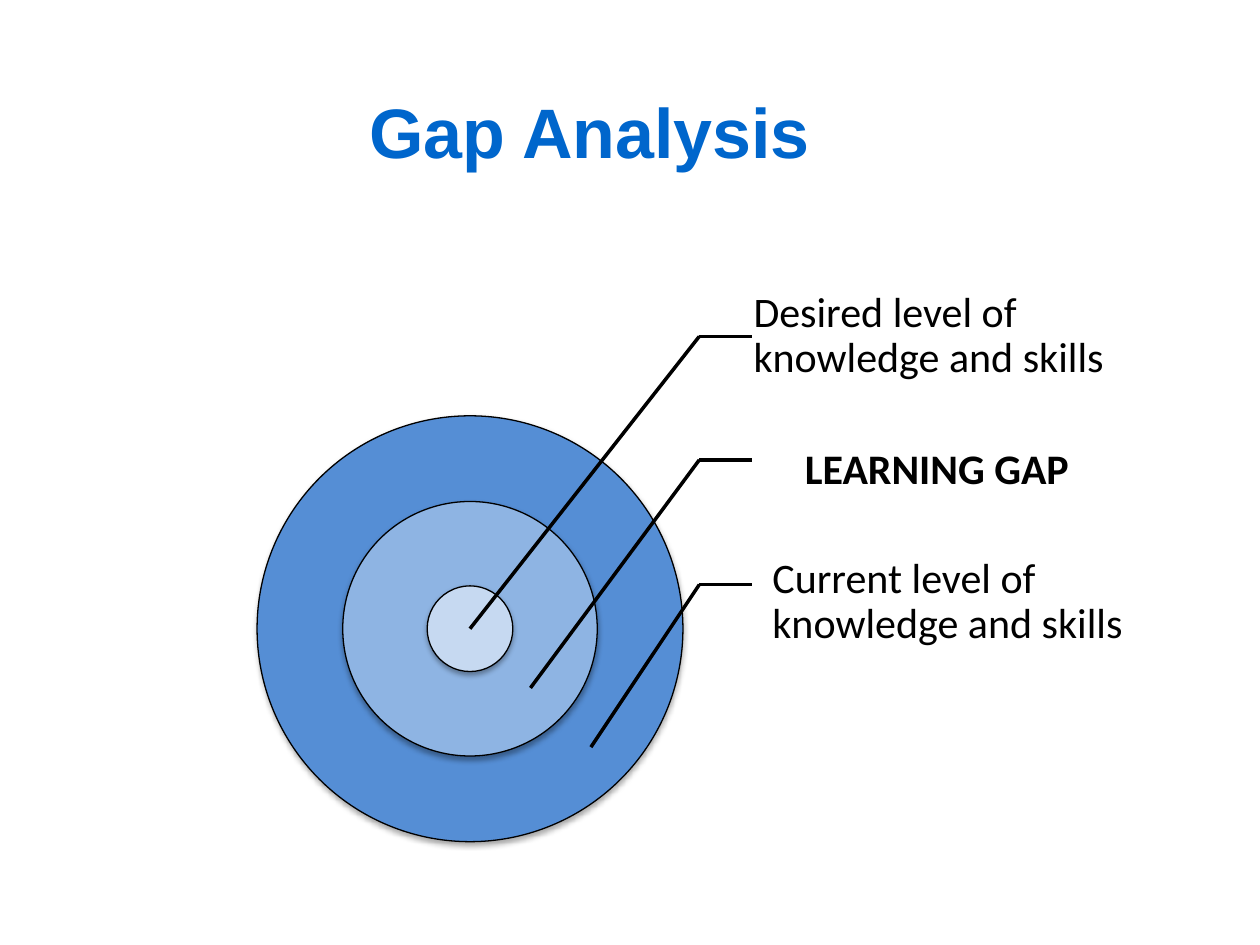
from lxml.etree import SubElement
from pptx import Presentation
from pptx.dml.color import RGBColor
from pptx.enum.shapes import MSO_CONNECTOR, MSO_SHAPE
from pptx.enum.text import MSO_ANCHOR, PP_ALIGN
from pptx.oxml.ns import qn
from pptx.util import Inches, Pt

TITLE_BLUE = RGBColor(0x00, 0x66, 0xCC)
BLACK = RGBColor(0x00, 0x00, 0x00)
OUTER_BLUE = RGBColor(0x55, 0x8E, 0xD5)
MIDDLE_BLUE = RGBColor(0x8E, 0xB4, 0xE3)
INNER_BLUE = RGBColor(0xC6, 0xD9, 0xF1)

CENTER_X, CENTER_Y = 3.73, 4.99
ELBOW_X, LABEL_X = 5.55, 5.97


def set_title(slide, text):
    title = slide.shapes.title
    title.left, title.top = Inches(0.43), Inches(0.6)
    title.width, title.height = Inches(8.5), Inches(1.25)
    frame = title.text_frame
    frame.text = text
    frame.vertical_anchor = MSO_ANCHOR.TOP
    frame.margin_top = Inches(0.1)
    paragraph = frame.paragraphs[0]
    paragraph.alignment = PP_ALIGN.CENTER
    font = paragraph.font
    font.name, font.size, font.bold = "Arial", Pt(40), True
    font.color.rgb = TITLE_BLUE


def add_soft_shadow(shape):
    shape.shadow.inherit = False
    effects = shape._element.spPr.find(qn("a:effectLst"))
    shadow = SubElement(effects, qn("a:outerShdw"), blurRad=str(Pt(3.1)),
                        dist=str(Pt(1.8)), dir="5400000", rotWithShape="0")
    color = SubElement(shadow, qn("a:srgbClr"), val=str(BLACK))
    SubElement(color, qn("a:alpha"), val="35000")


def add_ring(slide, diameter, color):
    ring = slide.shapes.add_shape(
        MSO_SHAPE.OVAL, Inches(CENTER_X - diameter / 2),
        Inches(CENTER_Y - diameter / 2), Inches(diameter), Inches(diameter))
    ring.fill.solid()
    ring.fill.fore_color.rgb = color
    ring.line.color.rgb = BLACK
    ring.line.width = Pt(0.75)
    add_soft_shadow(ring)


def add_line(slide, start, end):
    line = slide.shapes.add_connector(
        MSO_CONNECTOR.STRAIGHT, *map(Inches, start + end))
    line.line.color.rgb = BLACK
    line.line.width = Pt(2)
    SubElement(line._element.spPr, qn("a:effectLst"))


def add_leader(slide, y, target):
    elbow = (ELBOW_X, y)
    add_line(slide, elbow, (LABEL_X, y))
    add_line(slide, elbow, target)


def add_label(slide, text, left, top, width, emphasized):
    box = slide.shapes.add_textbox(
        Inches(left), Inches(top), Inches(width), Inches(0.98))
    frame = box.text_frame
    frame.word_wrap = True
    frame.vertical_anchor = MSO_ANCHOR.MIDDLE
    frame.margin_left, frame.margin_right = Inches(0.19), Inches(0.1)
    frame.margin_top = frame.margin_bottom = Inches(0.03)
    frame.text = text
    paragraph = frame.paragraphs[0]
    paragraph.alignment = PP_ALIGN.CENTER if emphasized else PP_ALIGN.LEFT
    paragraph.line_spacing = 0.9
    font = paragraph.font
    font.name, font.size, font.bold = "Calibri", Pt(24), emphasized
    font.color.rgb = BLACK


def main():
    presentation = Presentation()
    presentation.slide_width, presentation.slide_height = Inches(10), Inches(7.5)
    slide = presentation.slides.add_slide(presentation.slide_layouts[5])
    set_title(slide, "Gap Analysis")

    for diameter, color in ((3.38, OUTER_BLUE), (2.02, MIDDLE_BLUE), (0.68, INNER_BLUE)):
        add_ring(slide, diameter, color)

    levels = (
        ("Desired level of knowledge and skills", 5.79, 2.18, 3.85, False,
         2.67, (CENTER_X, CENTER_Y)),
        ("LEARNING GAP", 5.97, 3.25, 2.84, True, 3.65, (4.21, 5.46)),
        ("Current level of knowledge and skills", 5.94, 4.29, 3.65, False,
         4.64, (4.69, 5.93)),
    )
    for text, left, top, width, emphasized, leader_y, target in levels:
        add_label(slide, text, left, top, width, emphasized)
        add_leader(slide, leader_y, target)

    presentation.save("out.pptx")


if __name__ == "__main__":
    main()
